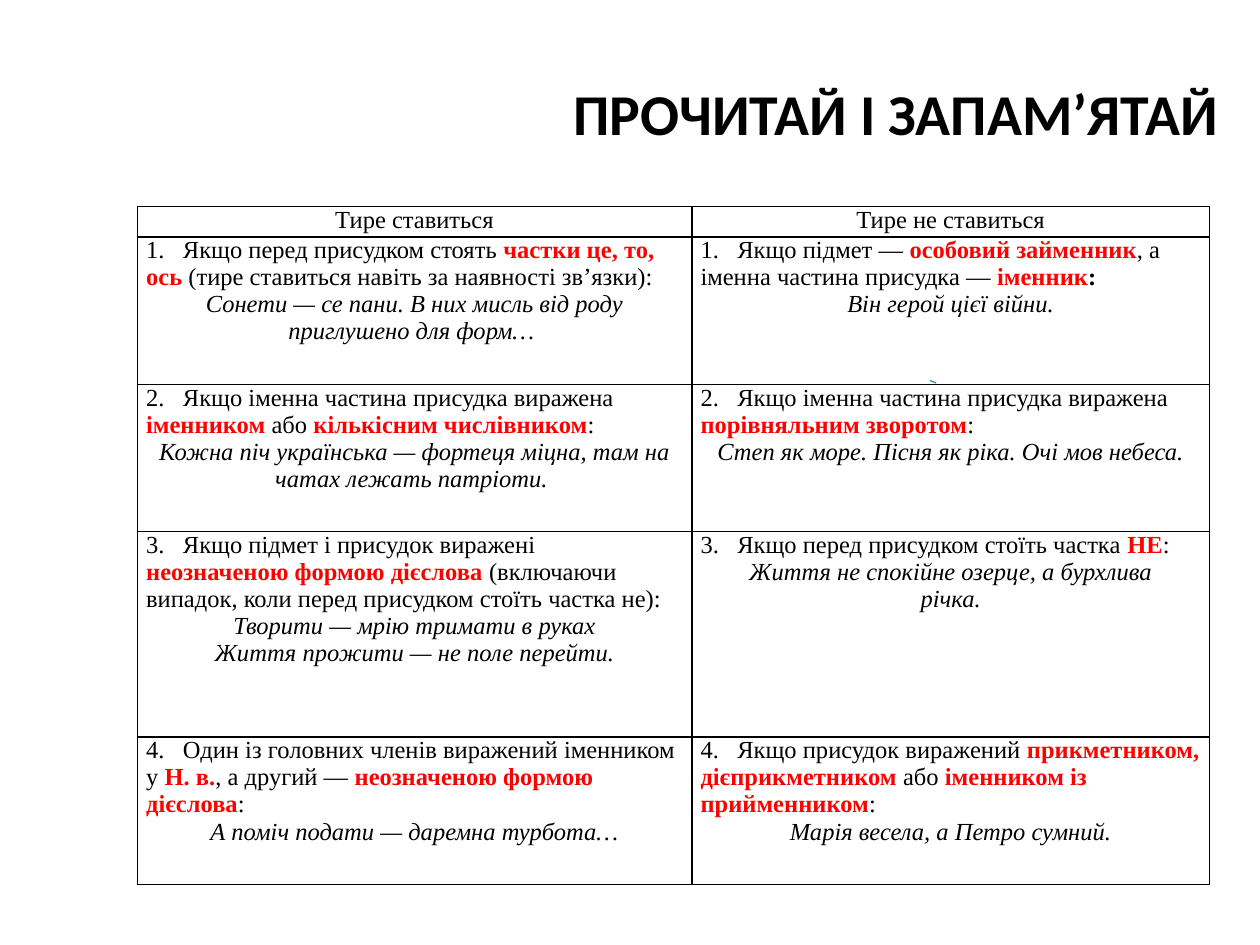
from pptx import Presentation
from pptx.dml.color import RGBColor
from pptx.enum.shapes import MSO_CONNECTOR
from pptx.enum.text import MSO_ANCHOR, PP_ALIGN
from pptx.oxml import parse_xml
from pptx.oxml.ns import nsdecls
from pptx.util import Inches, Pt

theme = {
    "ink": RGBColor(0, 0, 0),
    "red": RGBColor(255, 0, 0),
    "teal": RGBColor(0x38, 0x91, 0xA7),
    "head": ("Calibri", 33),
    "body": ("Times New Roman", 14),
}

# Rule with *key words* marked, then its examples
heads = ["Тире ставиться", "Тире не ставиться"]
rules = [
    [("Якщо перед присудком стоять *частки це, то, ось *(тире ставиться навіть за наявності зв’язки):",
      "Сонети — се пани. В них мисль від роду приглушено для форм… "),
     ("Якщо підмет — *особовий займенник*, а іменна частина присудка — *іменник**:*",
      "Він герой цієї війни.")],
    [("Якщо іменна частина присудка виражена *іменником *або *кількісним числівником*:",
      "Кожна піч українська — фортеця міцна, там на чатах лежать патріоти. "),
     ("Якщо іменна частина присудка виражена *порівняльним зворотом*:",
      "Степ як море. Пісня як ріка. Очі мов небеса.")],
    [("Якщо підмет і присудок виражені *неозначеною формою дієслова* (включаючи випадок, коли перед присудком стоїть частка не):",
      "Творити — мрію тримати в руках",
      "Життя прожити — не поле перейти."),
     ("Якщо перед присудком стоїть частка *НЕ*:",
      "Життя не спокійне озерце, а бурхлива\nрічка.")],
    [("Один із головних членів виражений іменником у *Н. в.*, а другий — *неозначеною формою дієслова*:",
      "А поміч подати — даремна турбота…"),
     ("Якщо присудок виражений *прикметником, дієприкметником *або *іменником із прийменником*:",
      "Марія весела, а Петро сумний.")],
]


def style(run, kind, color="ink", bold=False, italic=False):
    font = run.font
    font.name, size = theme[kind]
    font.size = Pt(size)
    font.color.rgb = theme[color]
    font.bold, font.italic = bold, italic


def frame(cell):
    """Clear the fill, set the margins and draw the four borders."""
    cell.fill.background()
    cell.margin_left = cell.margin_right = Inches(0.07)
    cell.margin_top = cell.margin_bottom = 0
    props = cell._tc.get_or_add_tcPr()
    for spot, side in enumerate("LRTB"):
        props.insert(spot, parse_xml(
            f'<a:ln{side} {nsdecls("a")} w="{Pt(1)}"><a:solidFill>'
            f'<a:srgbClr val="{theme["ink"]}"/></a:solidFill></a:ln{side}>'))


deck = Presentation()
deck.slide_width, deck.slide_height = Inches(10), Inches(7.5)
slide = deck.slides.add_slide(deck.slide_layouts[5])

# Title
title = slide.shapes.title
title.left, title.top = Inches(1.57), Inches(0.3)
title.width, title.height = Inches(8.2), Inches(1.25)
title.text_frame.text = "ПРОЧИТАЙ І ЗАПАМ’ЯТАЙ"
title.text_frame.vertical_anchor = MSO_ANCHOR.MIDDLE
para = title.text_frame.paragraphs[0]
para.alignment, para.line_spacing = PP_ALIGN.RIGHT, 0.9
style(para.runs[0], "head", bold=True)

# Small stroke behind the table
stroke = slide.shapes.add_connector(
    MSO_CONNECTOR.STRAIGHT, Inches(7.43), Inches(3.04), Inches(7.38), Inches(3.02))
stroke.line.color.rgb = theme["teal"]
stroke.line.width = Pt(0.75)
stroke._element.spPr.append(parse_xml(f'<a:effectLst {nsdecls("a")}/>'))

# Table grid
table = slide.shapes.add_table(
    5, 2, Inches(1.09), Inches(1.64), Inches(8.51), Inches(5.38)).table
table.first_row = table.horz_banding = False
for col, width in zip(table.columns, [4.4, 4.11]):
    col.width = Inches(width)
for row, height in zip(table.rows, [0.24, 1.17, 1.17, 1.63, 1.17]):
    row.height = Inches(height)

# Header row
for col, text in enumerate(heads):
    cell = table.cell(0, col)
    frame(cell)
    para = cell.text_frame.paragraphs[0]
    para.text, para.alignment = text, PP_ALIGN.CENTER
    style(para.runs[0], "body")

# Numbered rules with centred examples
for num, pair in enumerate(rules, 1):
    for col, (rule, *lines) in enumerate(pair):
        cell = table.cell(num, col)
        frame(cell)
        para = cell.text_frame.paragraphs[0]
        para.alignment = PP_ALIGN.LEFT
        for part, text in enumerate(f"{num}.   {rule}".split("*")):
            if text:
                run = para.add_run()
                run.text = text
                key = part % 2 == 1
                style(run, "body", "red" if key and text != ":" else "ink", key)
        for line in lines:
            para = cell.text_frame.add_paragraph()
            para.text, para.alignment = line, PP_ALIGN.CENTER
            for run in para.runs:
                style(run, "body", italic=True)

deck.save("out.pptx")
